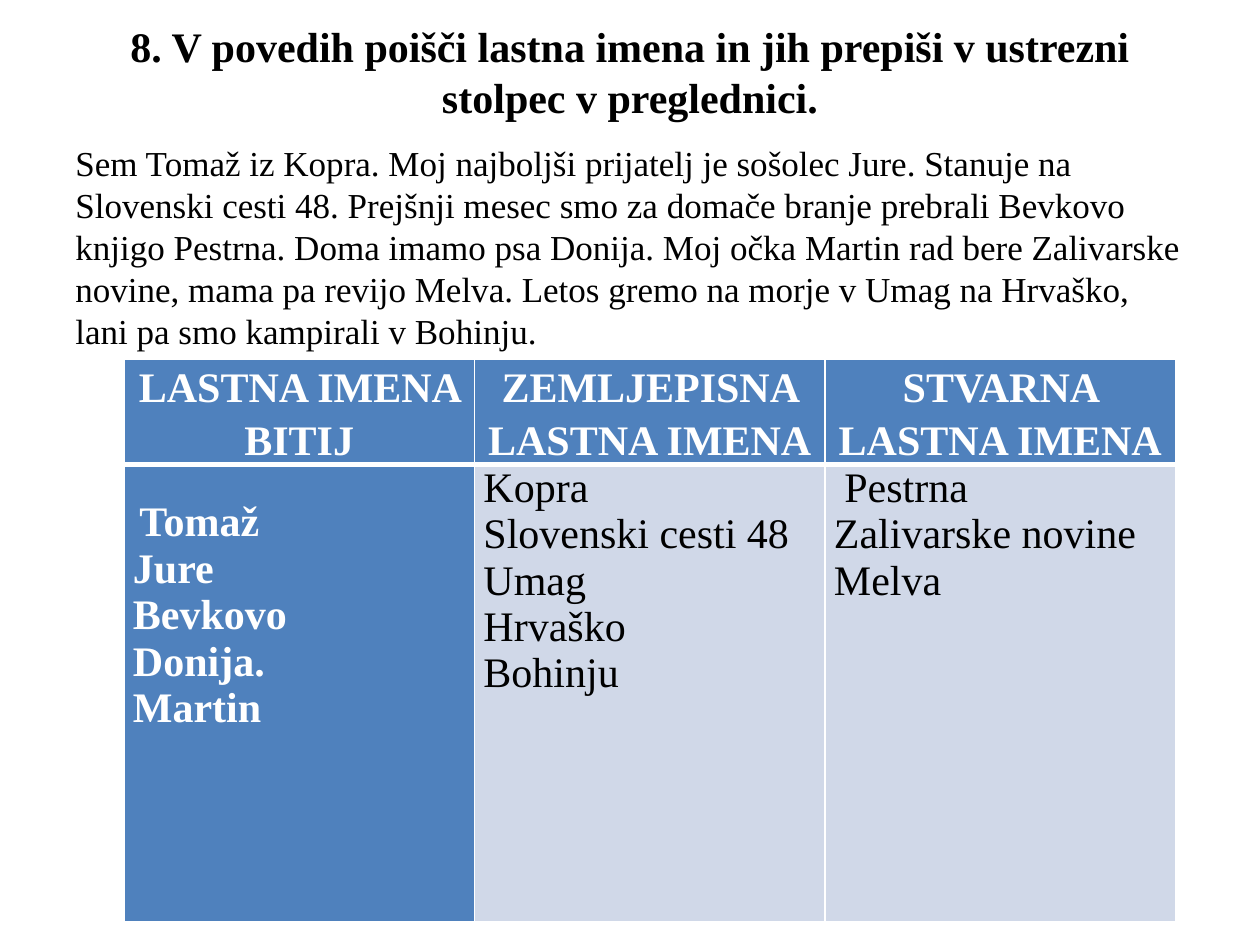
from dataclasses import dataclass

from lxml.etree import SubElement
from pptx import Presentation
from pptx.dml.color import RGBColor as RGB
from pptx.enum.text import MSO_ANCHOR as ANCHOR, PP_ALIGN as ALIGN
from pptx.oxml.ns import qn
from pptx.util import Cm, Pt


@dataclass(frozen=True)
class Theme:
    """Colours, font and type sizes of the slide."""
    font: str = "Times New Roman"
    black: RGB = RGB(0x00, 0x00, 0x00)
    white: RGB = RGB(0xFF, 0xFF, 0xFF)
    blue: RGB = RGB(0x4F, 0x81, 0xBD)
    pale: RGB = RGB(0xD0, 0xD8, 0xE8)
    large: Pt = Pt(24)
    body: Pt = Pt(20)


THEME = Theme()
TITLE = "8. V povedih poišči lastna imena in jih prepiši v ustrezni stolpec v preglednici."
STORY = (
    "Sem Tomaž iz Kopra. Moj najboljši prijatelj je sošolec Jure. Stanuje na "
    "Slovenski cesti 48. Prejšnji mesec smo za domače branje prebrali Bevkovo "
    "knjigo Pestrna. Doma imamo psa Donija. Moj očka Martin rad bere Zalivčske "
    "novine, mama pa revijo Lvina. Letos gremo na morje v Umag na Hrvaško, lani "
    "pa smo kampirali v Bohinju."
).replace("Zalivčske", "Zalivarske").replace("Lvina", "Melva")
COLUMNS = {
    "LASTNA IMENA BITIJ": ["Tomaž", "Jure", "Bevkovo", "Donija.", "Martin"],
    "ZEMLJEPISNA LASTNA IMENA": ["Kopra", "Slovenski cesti 48", "Umag", "Hrvaško", "Bohinju"],
    "STVARNA LASTNA IMENA": ["Pestrna", "Zalivarske novine", "Melva"],
}
FIRST_INDENTS = [Cm(0.13), Cm(0), Cm(0.21)]


def write(tf, lines, size, color, bold=False, align=ALIGN.LEFT, spacing=1.0):
    """Fill a text frame with one formatted paragraph per line."""
    tf.word_wrap = True
    tf.text = "\n".join(lines)
    for p in tf.paragraphs:
        p.alignment, p.line_spacing = align, spacing
        for r in p.runs:
            r.font.name, r.font.size, r.font.bold = THEME.font, size, bold
            r.font.color.rgb = color


def add_title(s):
    """Place and format the title placeholder."""
    sp = s.shapes.title
    sp.left, sp.top, sp.width, sp.height = Cm(1.27), Cm(0.25), Cm(22.86), Cm(2.36)
    write(sp.text_frame, [TITLE], THEME.large, THEME.black, True, ALIGN.CENTER, Pt(29.4))
    sp.text_frame.vertical_anchor = ANCHOR.MIDDLE


def add_story(s):
    """Add the text in which the names are to be found."""
    sp = s.shapes.add_textbox(Cm(1.27), Cm(2.72), Cm(22.86), Cm(14.3))
    write(sp.text_frame, [STORY], THEME.body, THEME.black, spacing=Pt(24))


def style_cell(cell, fill, bottom=Pt(1)):
    """Give a cell its margins, white borders and fill."""
    cell.margin_left = cell.margin_right = Cm(0.18)
    cell.margin_top = cell.margin_bottom = Cm(0)
    tc_pr = cell._tc.get_or_add_tcPr()
    for side in "LRTB":
        width = bottom if side == "B" else Pt(1)
        ln = SubElement(tc_pr, qn(f"a:ln{side}"), w=str(int(width)))
        SubElement(SubElement(ln, qn("a:solidFill")), qn("a:srgbClr"), val=str(THEME.white))
    cell.fill.solid()
    cell.fill.fore_color.rgb = fill


def indent_first(cell, indent):
    """Indent the first paragraph of a cell."""
    p_pr = cell.text_frame.paragraphs[0]._p.get_or_add_pPr()
    p_pr.set("marL", str(int(indent)))


def add_names_table(s):
    """Add the table that sorts the names by kind."""
    frame = s.shapes.add_table(2, len(COLUMNS), Cm(2.5), Cm(7.24), Cm(21.2), Cm(11.35))
    table = frame.table
    table.first_col = True
    table.horz_banding = False
    table.rows[0].height, table.rows[1].height = Cm(2.13), Cm(9.22)
    for col, (heading, names) in enumerate(COLUMNS.items()):
        is_key = col == 0
        head, cell = table.cell(0, col), table.cell(1, col)
        style_cell(head, THEME.blue, Pt(3))
        write(head.text_frame, [heading], THEME.large, THEME.white, True, ALIGN.CENTER, Pt(30))
        style_cell(cell, THEME.blue if is_key else THEME.pale)
        write(cell.text_frame, names, THEME.large, THEME.white if is_key else THEME.black, is_key)
        indent_first(cell, FIRST_INDENTS[col])
    table.cell(1, 0).margin_top = Cm(0.7)


def main():
    """Build the slide and save it."""
    prs = Presentation()
    prs.slide_width, prs.slide_height = Cm(25.4), Cm(19.05)
    s = prs.slides.add_slide(prs.slide_layouts[5])
    add_title(s)
    add_story(s)
    add_names_table(s)
    prs.save("out.pptx")


if __name__ == "__main__":
    main()
